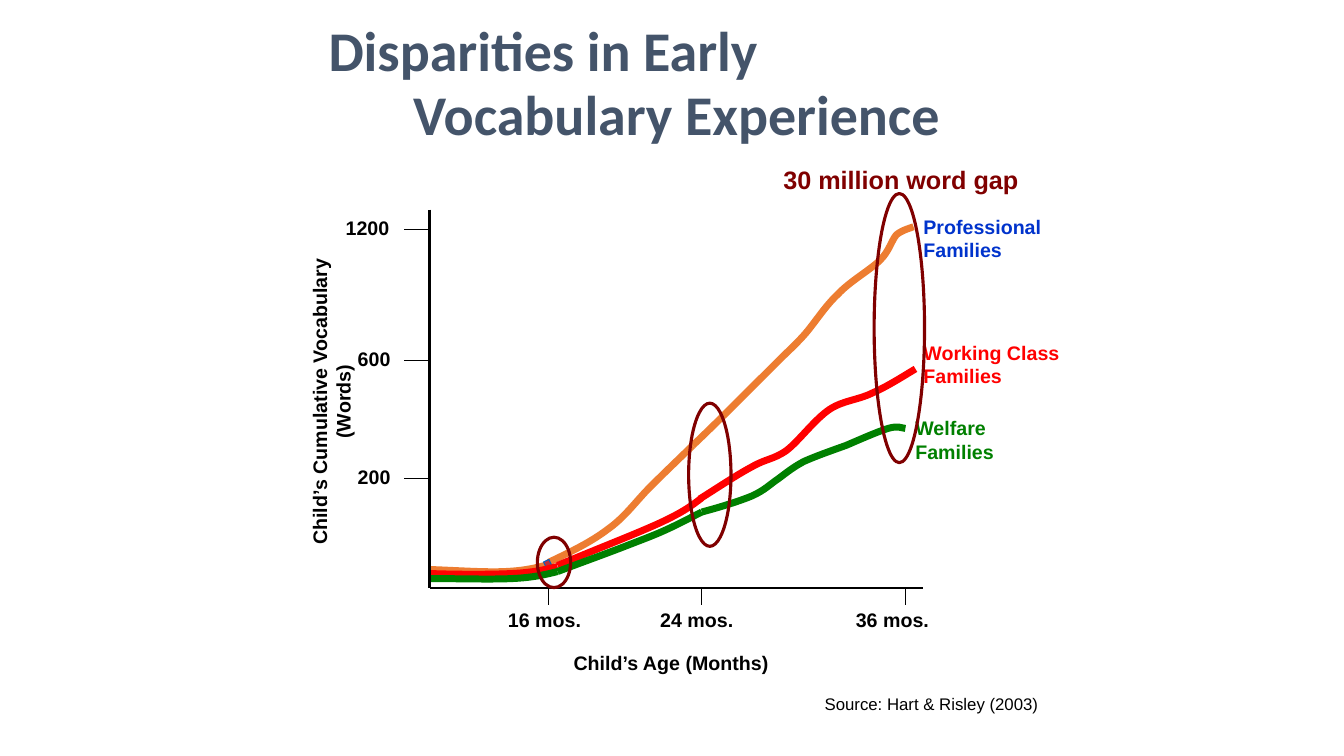
from lxml import etree
from pptx import Presentation
from pptx.dml.color import RGBColor
from pptx.enum.shapes import MSO_CONNECTOR as Connector, MSO_SHAPE as Shape
from pptx.enum.text import MSO_ANCHOR as Anchor, PP_ALIGN as Align
from pptx.oxml.ns import qn
from pptx.util import Inches, Pt

BLACK, MAROON, SLATE = "000000", "800000", "44546A"
ORANGE, RED, GREEN, BLUE = "ED7D31", "FF0000", "008000", "0033CC"


def color(value):
    return RGBColor.from_string(value)


class Canvas:
    """Holds the slide and the text style shared by its elements."""

    font, size = "Arial", 14

    def __init__(self, slide):
        self.slide = slide
        self.shapes = slide.shapes

    def outline(self, shape, hex_color, width):
        shape.line.color.rgb = color(hex_color)
        shape.line.width = Pt(width)

    def text(self, words, left, top, width, height, ink=BLACK, size=size, bold=True,
             font=font, align=Align.LEFT, wrap=True, anchor=Anchor.TOP, rotation=0):
        box = self.shapes.add_textbox(*map(Inches, (left, top, width, height)))
        box.rotation = rotation
        frame = box.text_frame
        frame.word_wrap = wrap
        frame.vertical_anchor = anchor
        paragraph = frame.paragraphs[0]
        paragraph.text = words
        paragraph.alignment = align
        paragraph.font.name, paragraph.font.size = font, Pt(size)
        paragraph.font.bold = bold
        paragraph.font.color.rgb = color(ink)
        return paragraph

    def line(self, x1, y1, x2, y2, width=0.75):
        rule = self.shapes.add_connector(Connector.STRAIGHT, *map(Inches, (x1, y1, x2, y2)))
        self.outline(rule, BLACK, width)
        etree.SubElement(rule._element.spPr, qn("a:effectLst"))

    def shape(self, kind, left, top, width, height, ink, weight, fill=None, rotation=0):
        figure = self.shapes.add_shape(kind, *map(Inches, (left, top, width, height)))
        figure.shadow.inherit = False
        figure.rotation = rotation
        if fill:
            figure.fill.solid()
            figure.fill.fore_color.rgb = color(fill)
        else:
            figure.fill.background()
        self.outline(figure, ink, weight)

    def curve(self, points, ink, weight=5):
        """Draw a start point followed by Bézier triples (two controls, one end)."""
        start, *rest = [(Inches(x), Inches(y)) for x, y in points]
        builder = self.shapes.build_freeform(*start)
        builder.add_line_segments(rest, close=False)
        stroke = builder.convert_to_shape()
        stroke.shadow.inherit = False
        stroke.fill.background()
        self.outline(stroke, ink, weight)
        # Turn each three straight segments into one cubic segment
        segments = list(stroke._element.iter(qn("a:lnTo")))
        for i in range(0, len(segments), 3):
            cubic = etree.Element(qn("a:cubicBezTo"))
            segments[i].addprevious(cubic)
            for segment in segments[i:i + 3]:
                cubic.append(segment[0])
                segment.getparent().remove(segment)


prs = Presentation()
prs.slide_width, prs.slide_height = Inches(13.33), Inches(7.5)
canvas = Canvas(prs.slides.add_slide(prs.slide_layouts[6]))

# Title, with its second line set further in
title = canvas.text("Disparities in Early\vVocabulary Experience", 2.08, 0.25, 9.25, 1.17,
                    SLATE, 40, font="Calibri", anchor=Anchor.MIDDLE)
title.line_spacing = 0.95
title_props = title._p.get_or_add_pPr()
title_props.set("marL", str(Inches(1.92)))
title_props.set("indent", str(Inches(-0.84)))

# Vocabulary growth curves, in strokes that meet at the marked ages
growth = [
    (ORANGE, [
        [(4.26, 5.65), (4.54, 5.66), (4.82, 5.68), (5.02, 5.67),
         (5.22, 5.66), (5.33, 5.63), (5.44, 5.6)],
        [(5.44, 5.58), (5.65, 5.48), (5.86, 5.38), (6.03, 5.25),
         (6.2, 5.13), (6.31, 4.97), (6.45, 4.83), (6.59, 4.69), (6.8, 4.49), (6.87, 4.42)],
        [(6.87, 4.42), (7.06, 4.24), (7.24, 4.06), (7.38, 3.92),
         (7.52, 3.78), (7.62, 3.68), (7.72, 3.58), (7.81, 3.49), (7.87, 3.44), (7.97, 3.33),
         (8.07, 3.22), (8.18, 3.04), (8.31, 2.92), (8.43, 2.79), (8.63, 2.68), (8.73, 2.58),
         (8.82, 2.49), (8.84, 2.39), (8.89, 2.33), (8.95, 2.28), (9.04, 2.26), (9.06, 2.25)],
    ]),
    (RED, [
        [(4.26, 5.69), (4.56, 5.7), (4.86, 5.7), (5.08, 5.69),
         (5.29, 5.68), (5.41, 5.65), (5.53, 5.62)],
        [(5.53, 5.61), (5.91, 5.45), (6.3, 5.3), (6.54, 5.19),
         (6.78, 5.08), (6.87, 5.01), (6.96, 4.94)],
        [(6.94, 4.95), (7.13, 4.83), (7.31, 4.71), (7.46, 4.63),
         (7.6, 4.55), (7.67, 4.56), (7.8, 4.47), (7.92, 4.38), (8.08, 4.16), (8.23, 4.06),
         (8.37, 3.97), (8.51, 3.97), (8.65, 3.9), (8.79, 3.84), (8.93, 3.75), (9.08, 3.66)],
    ]),
    (GREEN, [
        [(4.26, 5.74), (4.56, 5.74), (4.86, 5.75), (5.08, 5.74),
         (5.29, 5.73), (5.41, 5.7), (5.53, 5.67)],
        [(5.53, 5.67), (5.77, 5.58), (6.02, 5.49), (6.2, 5.42),
         (6.38, 5.35), (6.49, 5.31), (6.62, 5.25), (6.75, 5.19), (6.9, 5.11), (6.96, 5.08)],
        [(6.96, 5.08), (7.15, 5.03), (7.34, 4.97), (7.46, 4.92),
         (7.59, 4.86), (7.63, 4.81), (7.72, 4.75), (7.8, 4.69), (7.86, 4.64), (7.97, 4.58),
         (8.08, 4.53), (8.25, 4.47), (8.39, 4.42), (8.53, 4.36), (8.71, 4.28), (8.81, 4.25),
         (8.91, 4.22), (8.95, 4.25), (8.98, 4.25)],
    ]),
]
for ink, strokes in growth:
    for stroke_points in strokes:
        canvas.curve(stroke_points, ink)
    if ink == ORANGE:  # marker where the professional curve turns up
        canvas.shape(Shape.RECTANGLE, 5.4, 5.56, 0.06, 0.06, "0563C1", 0.75, "BF2F37", 64.2)

# Axes
axis_x, axis_y = 4.26, 5.83
canvas.line(axis_x, 2.08, axis_x, axis_y, 1.5)
canvas.line(9.15, axis_y, axis_x, axis_y, 1.5)

# Age ticks
for age, tick_x, label_x in [(16, 5.44, 4.94), (24, 6.96, 6.45), (36, 8.98, 8.39)]:
    canvas.line(tick_x, 6, tick_x, axis_y)
    canvas.text(f"{age} mos.", label_x, 5.98, 0.93, 0.33, wrap=False)

# Word-count ticks
for words, tick_y, label_x in [(200, 4.75, 3.45), (600, 3.58, 3.45), (1200, 2.28, 3.33)]:
    canvas.line(axis_x, tick_y, axis_x - 0.25, tick_y)
    canvas.text(str(words), label_x, tick_y - 0.19, 3.98 - label_x, 0.33, wrap=False)

# Axis titles
canvas.text("Child’s Cumulative Vocabulary (Words)", 1.63, 3.7, 3.31, 0.57,
            align=Align.CENTER, rotation=270)
canvas.text("Child’s Age (Months)", 5.59, 6.41, 2.19, 0.34, wrap=False)

# Family labels
for family, left, top, ink in [("Professional Families", 9.06, 2.08, BLUE),
                               ("Working Class Families", 9.06, 3.33, RED),
                               ("Welfare\vFamilies", 8.98, 4.08, GREEN)]:
    canvas.text(family, left, top, 1.94, 0.57, ink)

# Source line
canvas.text("Source: Hart & Risley (2003)", 8.08, 6.83, 2.92, 0.3, size=12, bold=False)

# Ellipses around the widening gap
for gap in [(5.33, 5.33, 0.33, 0.5), (6.83, 4, 0.42, 1.42), (8.67, 1.92, 0.5, 2.67)]:
    canvas.shape(Shape.OVAL, *gap, MAROON, 2.25)
canvas.text("30 million word gap", 7.67, 1.58, 2.58, 0.4, MAROON, 18)

prs.save("out.pptx")
